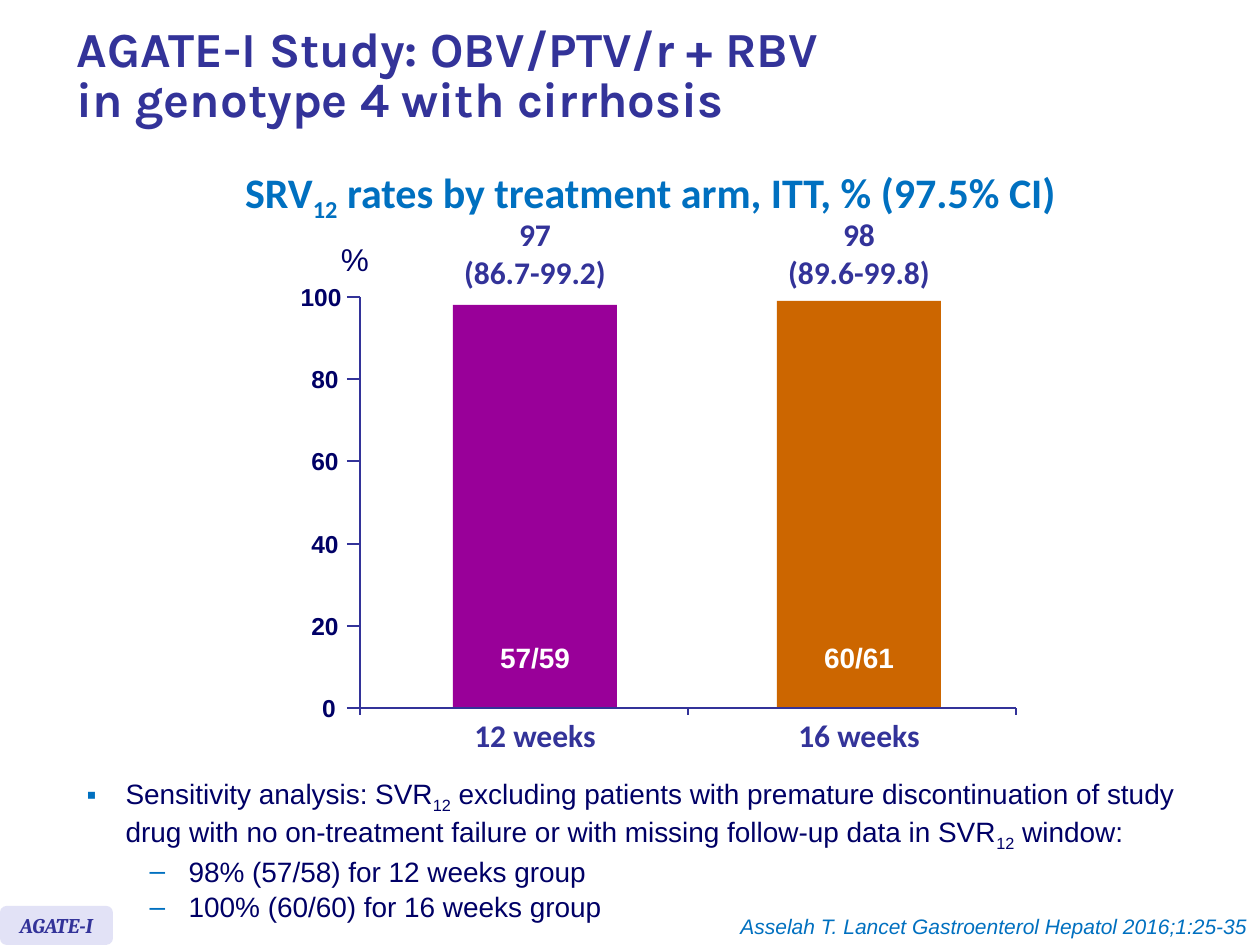
from dataclasses import dataclass

from lxml.etree import SubElement
from pptx import Presentation
from pptx.dml.color import RGBColor
from pptx.enum.shapes import MSO_CONNECTOR as LINK, MSO_SHAPE as SHAPE
from pptx.enum.text import MSO_ANCHOR as ANCHOR, MSO_AUTO_SIZE as FIT, PP_ALIGN as ALIGN
from pptx.oxml.ns import qn
from pptx.util import Pt

PX = 914400 // 126


@dataclass
class Style:
    font: str
    size: int
    color: str
    bold: bool = False
    italic: bool = False


class Theme:
    navy, ink, blue, white = "333399", "000066", "0070C0", "FFFFFF"
    badge = "E2E2F6"
    rule = 1.5
    title = Style("Karla", 28, navy, True)
    head = Style("Calibri", 24, blue, True)
    label = Style("Calibri", 18, navy, True)
    tick = Style("Arial", 14, ink, True)
    unit = Style("Arial", 18, ink)
    count = Style("Arial", 16, white, True)
    body = Style("Arial", 16, ink)
    tag = Style("Cambria", 12, navy, True, True)
    cite = Style("Arial", 12, blue, False, True)


# Text between underscores is set as subscript; \n is a line break.
TITLE = "AGATE-I Study: OBV/PTV/r + RBV\nin genotype 4 with cirrhosis"
HEAD = "SRV_12_ rates by treatment arm, ITT, % (97.5% CI)"
TAG = "AGATE-I"
CITE = "Asselah T. Lancet Gastroenterol Hepatol 2016;1:25-35"
# arm, rate, interval, patients, bar height in percent, colour
ARMS = [
    ("12 weeks", "97", "(86.7-99.2)", "57/59", 98, "990099"),
    ("16 weeks", "98", "(89.6-99.8)", "60/61", 99, "CC6600"),
]
NOTES = [
    (0, "Sensitivity analysis: SVR_12_ excluding patients with premature discontinuation of study\n"
        "drug with no on-treatment failure or with missing follow-up data in SVR_12_ window:"),
    (1, "98% (57/58) for 12 weeks group"),
    (1, "100% (60/60) for 16 weeks group"),
]
BULLETS = [("▪", 39), ("‒", 102)]  # sign, text indent
HANG = 39

# Plot area
LEFT, RIGHT, TOP, BASE = 360, 1016, 297, 708
TICK, NOTCH = 13, 7
BAR, FIRST, STEP = 164, 535, 324


def rgb(code):
    return RGBColor.from_string(code)


def place(shape, x, y, w, h):
    shape.left, shape.top, shape.width, shape.height = (round(v) * PX for v in (x, y, w, h))


def write(par, text, style):
    for row, line in enumerate(text.split("\n")):
        if row:
            par.add_line_break()
        for i, part in enumerate(line.split("_")):
            run = par.add_run()
            run.text = part
            font = run.font
            font.name, font.size = style.font, Pt(style.size)
            font.bold, font.italic = style.bold, style.italic
            font.color.rgb = rgb(style.color)
            if i % 2:
                run._r.get_or_add_rPr().set("baseline", "-25000")


def setup(frame, wrap, anchor, inset=True):
    frame.auto_size, frame.word_wrap = FIT.NONE, wrap
    frame.vertical_anchor = anchor
    if not inset:
        frame.margin_left = frame.margin_right = 0
        frame.margin_top = frame.margin_bottom = 0


def label(slide, at, lines, style, align=ALIGN.CENTER, wrap=False, inset=True):
    box = slide.shapes.add_textbox(0, 0, 0, 0)
    place(box, *at)
    frame = box.text_frame
    setup(frame, wrap, ANCHOR.TOP, inset)
    for i, line in enumerate(lines):
        par = frame.add_paragraph() if i else frame.paragraphs[0]
        par.alignment = align
        write(par, line, style)


def block(slide, kind, at, color):
    shape = slide.shapes.add_shape(kind, 0, 0, 0, 0)
    place(shape, *at)
    shape.shadow.inherit = False
    shape.fill.solid()
    shape.fill.fore_color.rgb = rgb(color)
    shape.line.fill.background()
    return shape


def rule(slide, *ends):
    line = slide.shapes.add_connector(LINK.STRAIGHT, *(v * PX for v in ends))
    line.line.color.rgb = rgb(Theme.navy)
    line.line.width = Pt(Theme.rule)
    SubElement(line._element.spPr, qn("a:effectLst"))


def bullet(par, sign, indent):
    props = par._p.get_or_add_pPr()
    props.set("marL", str(indent * PX))
    props.set("indent", str(-HANG * PX))
    tint = SubElement(props, qn("a:buClr"))
    SubElement(tint, qn("a:srgbClr")).set("val", Theme.blue)
    SubElement(props, qn("a:buChar")).set("char", sign)


def add_title(slide):
    title = slide.shapes.title
    place(title, 64, 10, 1150, 135)
    setup(title.text_frame, True, ANCHOR.MIDDLE)
    par = title.text_frame.paragraphs[0]
    par.alignment, par.line_spacing = ALIGN.LEFT, 0.85
    write(par, TITLE, Theme.title)


def add_axes(slide):
    rule(slide, LEFT, TOP, LEFT, BASE)
    rule(slide, LEFT, BASE, RIGHT, BASE)
    for value in range(0, 101, 20):
        y = round(BASE - (BASE - TOP) * value / 100)
        n = len(str(value))
        rule(slide, LEFT - TICK, y, LEFT, y)
        label(slide, (333 - 11 * n, y - 15, 14 * n, 30), [str(value)], Theme.tick, inset=False)
    for x in (LEFT, (LEFT + RIGHT) // 2, RIGHT):
        rule(slide, x, BASE + NOTCH, x, BASE)
    label(slide, (328, 234, 54, 51), ["%"], Theme.unit)


def add_bars(slide):
    for i, (arm, rate, span, count, size, color) in enumerate(ARMS):
        mid = FIRST + i * STEP
        high = (BASE - TOP) * size / 100
        block(slide, SHAPE.RECTANGLE, (mid - BAR / 2, BASE - high, BAR, high), color)
        label(slide, (mid - 72, 215, 144, 77), [rate, span], Theme.label, inset=False)
        label(slide, (mid - 48, 634, 96, 47), [count], Theme.count)
        label(slide, (mid - 74, 710, 148, 51), [arm], Theme.label)


def add_notes(slide):
    body = slide.placeholders[1]
    place(body, 74, 770, 1144, 149)
    frame = body.text_frame
    setup(frame, False, ANCHOR.TOP)
    for i, (level, text) in enumerate(NOTES):
        par = frame.add_paragraph() if i else frame.paragraphs[0]
        par.level = level
        bullet(par, *BULLETS[level])
        par.space_before = Pt(level)
        write(par, text, Theme.body)


def main():
    deck = Presentation()
    deck.slide_width, deck.slide_height = 1260 * PX, 945 * PX
    slide = deck.slides.add_slide(deck.slide_layouts[1])
    add_title(slide)
    badge = block(slide, SHAPE.ROUNDED_RECTANGLE, (0, 906, 113, 39), Theme.badge)
    setup(badge.text_frame, False, ANCHOR.MIDDLE)
    par = badge.text_frame.paragraphs[0]
    par.alignment = ALIGN.CENTER
    write(par, TAG, Theme.tag)
    label(slide, (227, 160, 847, 63), [HEAD], Theme.head)
    add_bars(slide)
    add_axes(slide)
    add_notes(slide)
    label(slide, (263, 907, 997, 38), [CITE], Theme.cite, ALIGN.RIGHT, wrap=True)
    deck.save("out.pptx")


if __name__ == "__main__":
    main()
